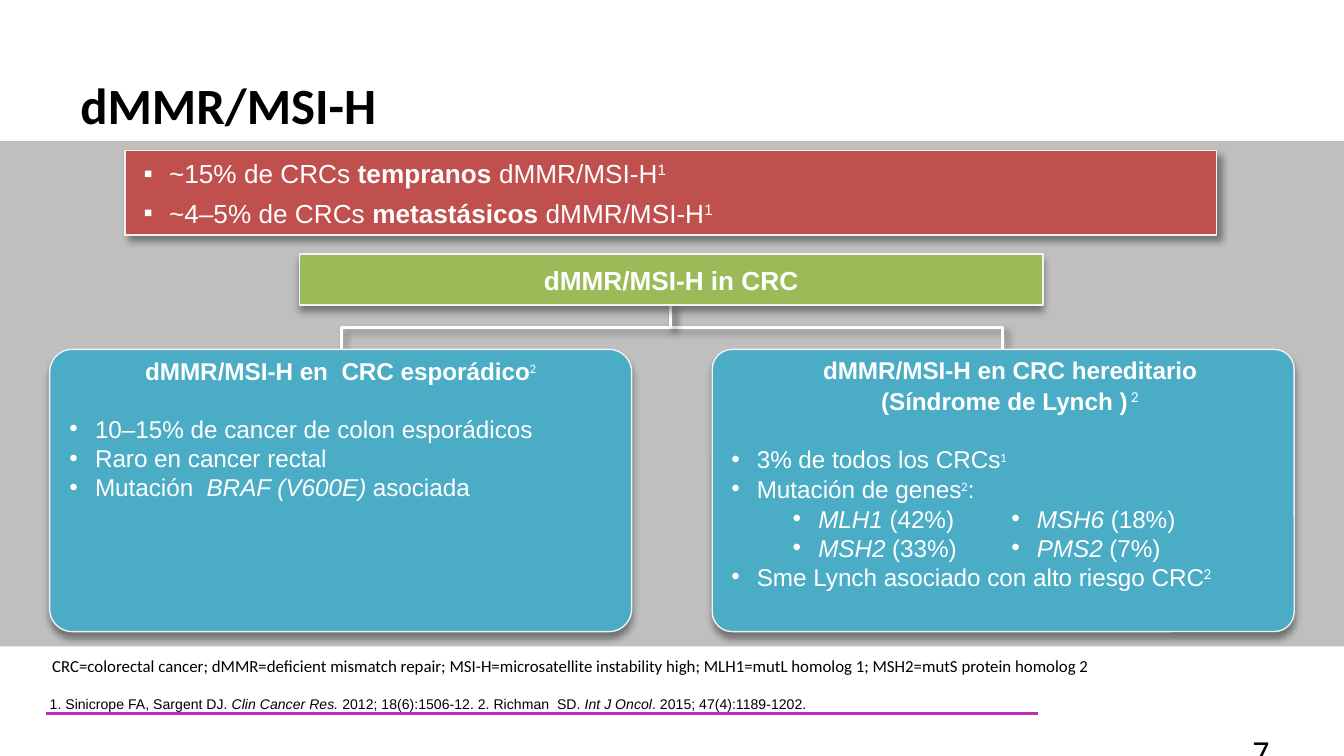
from dataclasses import dataclass
from typing import Optional

from lxml.etree import SubElement
from pptx import Presentation
from pptx.dml.color import RGBColor
from pptx.enum.shapes import MSO_CONNECTOR, MSO_SHAPE
from pptx.enum.text import MSO_ANCHOR, PP_ALIGN
from pptx.oxml.ns import qn
from pptx.util import Emu, Pt

EMU_PER_PX = 9144  # 100 px to the inch
SLIDE_WIDTH = 1000


@dataclass(frozen=True)
class Theme:
    white: str = "FFFFFF"
    black: str = "000000"
    band: str = "BFBFBF"
    outline: str = "F2F2F2"
    red: str = "C0504D"
    green: str = "9BBB59"
    blue: str = "4BACC6"
    purple: str = "BE2BBB"
    body_font: str = "Arial"
    alternate_font: str = "Calibri"
    title: float = 27.2
    page: float = 18
    lead: float = 14
    body: float = 13
    mark: float = 12
    abbreviations: float = 9
    references: float = 7.5
    thin: float = 0.75
    rule: float = 1.5


THEME = Theme()


@dataclass(frozen=True)
class Span:
    text: str
    size: float = THEME.body
    font: str = THEME.body_font
    color: str = THEME.white
    bold: bool = False
    italic: bool = False
    raised: bool = False


@dataclass(frozen=True)
class Line:
    spans: list[Span]
    bullet: str = ""
    indent: int = 19
    hanging: int = 19
    level: int = 0
    centered: bool = False
    before: float = 0
    after: float = 0
    spacing: Optional[float] = None


@dataclass(frozen=True)
class Box:
    left: int
    top: int
    width: int
    height: int
    lines: list[Line]
    insets: tuple[int, int, int, int] = (10, 5, 10, 5)
    anchor: MSO_ANCHOR = MSO_ANCHOR.TOP
    columns: int = 1
    fill: str = ""  # an empty fill makes a plain text box
    shadow_angle: int = 90
    corner: float = 0


def px(value: float) -> Emu:
    return Emu(round(value * EMU_PER_PX))


def add_shadow(shape, angle: int) -> None:
    effects = SubElement(shape._element.spPr, qn("a:effectLst"))
    shadow = SubElement(effects, qn("a:outerShdw"), blurRad=str(Pt(4)), dist=str(Pt(3)),
                        dir=str(angle * 60000), algn="ctr", rotWithShape="0")
    color = SubElement(shadow, qn("a:srgbClr"), val=THEME.black)
    SubElement(color, qn("a:alpha"), val="40000")


def write_span(paragraph, span: Span) -> None:
    if span.text == "\n":
        paragraph.add_line_break()
        SubElement(paragraph._p[-1], qn("a:rPr"), sz=str(round(span.size * 100)))
        return
    run = paragraph.add_run()
    run.text = span.text
    run.font.name, run.font.size = span.font, Pt(span.size)
    run.font.bold, run.font.italic = span.bold, span.italic
    run.font.color.rgb = RGBColor.from_string(span.color)
    if span.raised:
        run._r.get_or_add_rPr().set("baseline", "30000")


def write_line(paragraph, line: Line) -> None:
    paragraph.alignment = PP_ALIGN.CENTER if line.centered else PP_ALIGN.LEFT
    paragraph.level = line.level
    if line.bullet:
        properties = paragraph._p.get_or_add_pPr()
        properties.set("marL", str(px(line.indent)))
        properties.set("indent", str(px(-line.hanging)))
        color = SubElement(properties, qn("a:buClr"))
        SubElement(color, qn("a:srgbClr"), val=THEME.white)
        SubElement(properties, qn("a:buFont"), typeface=THEME.body_font)
        SubElement(properties, qn("a:buChar"), char=line.bullet)
    paragraph.space_before, paragraph.space_after = Pt(line.before), Pt(line.after)
    if line.spacing:
        paragraph.line_spacing = line.spacing
    for span in line.spans:
        write_span(paragraph, span)


def draw_box(slide, box: Box) -> None:
    bounds = [px(value) for value in (box.left, box.top, box.width, box.height)]
    if box.fill:
        kind = MSO_SHAPE.ROUNDED_RECTANGLE if box.corner else MSO_SHAPE.RECTANGLE
        shape = slide.shapes.add_shape(kind, *bounds)
        if box.corner:
            shape.adjustments[0] = box.corner
        shape.fill.solid()
        shape.fill.fore_color.rgb = RGBColor.from_string(box.fill)
        shape.line.color.rgb = RGBColor.from_string(THEME.outline)
        shape.line.width = Pt(THEME.thin)
        add_shadow(shape, box.shadow_angle)
    else:
        shape = slide.shapes.add_textbox(*bounds)
    frame = shape.text_frame
    frame.word_wrap = True
    frame.vertical_anchor = box.anchor
    (frame.margin_left, frame.margin_top,
     frame.margin_right, frame.margin_bottom) = map(px, box.insets)
    if box.columns > 1:
        frame._txBody.bodyPr.set("numCol", str(box.columns))
    for index, line in enumerate(box.lines):
        write_line(frame.add_paragraph() if index else frame.paragraphs[0], line)


def style_connector(connector, color: str) -> None:
    connector.line.color.rgb = RGBColor.from_string(color)
    connector.line.width = Pt(THEME.rule)


def draw_branch(slide, start: tuple[int, int], end: tuple[int, int]) -> None:
    """Elbow that leaves downwards: a sideways elbow turned a quarter."""
    (x1, y1), (x2, y2) = start, end
    middle_x, middle_y = (x1 + x2) / 2, (y1 + y2) / 2
    half_width, half_height = (y2 - y1) / 2, abs(x2 - x1) / 2
    connector = slide.shapes.add_connector(
        MSO_CONNECTOR.ELBOW, px(middle_x - half_width), px(middle_y - half_height),
        px(middle_x + half_width), px(middle_y + half_height))
    transform = connector._element.spPr.find(qn("a:xfrm"))
    transform.set("rot", str((270 if x2 > x1 else 90) * 60000))
    if x2 > x1:
        transform.set("flipH", "1")
    style_connector(connector, THEME.white)
    add_shadow(connector, 45)


def mark(text: str, size: float = THEME.mark) -> Span:
    return Span(text, size, THEME.alternate_font, raised=True)


def share_line(stage: str, share: str) -> Line:
    size = THEME.lead
    return Line([Span(f"{share} de CRCs ", size), Span(f"{stage} ", size, bold=True),
                 Span("dMMR/MSI-H", size), Span("1", size, raised=True)],
                bullet="▪", indent=23, after=4.5)


def gene_line(gene: str, share: str, indent: int) -> Line:
    return Line([Span(f"{gene} ", italic=True), Span(f"({share})")], "•", indent, level=1)


def plain(text: str, size: float, font: str = THEME.alternate_font, **style: bool) -> Span:
    return Span(text, size, font, THEME.black, **style)


def reference(text: str, italic: bool = False) -> Span:
    return plain(text, THEME.references, THEME.body_font, italic=italic)


CARD_TOP, CARD_WIDTH, CARD_HEIGHT = 260, 433, 210
LEFT_CARD, RIGHT_CARD = 37, 530
BLANK_LINE = 15.5  # points

BOXES = [
    Box(50, 4, 896, 82, [Line([plain("dMMR/MSI-H", THEME.title, bold=True)])],
        insets=(10, 51, 10, 5)),
    Box(223, 189, 553, 38, [Line([Span("dMMR/MSI-H in CRC", THEME.lead, bold=True)], centered=True)],
        anchor=MSO_ANCHOR.MIDDLE, fill=THEME.green),
    Box(93, 112, 812, 63, [share_line("tempranos", "~15%"), share_line("metastásicos", "~4–5%")],
        insets=(10, 5, 0, 5), anchor=MSO_ANCHOR.MIDDLE, fill=THEME.red, shadow_angle=45),
    Box(LEFT_CARD, CARD_TOP, CARD_WIDTH, CARD_HEIGHT, [
        Line([Span("dMMR/MSI-H en  CRC esporádico", bold=True), mark("2")], centered=True),
        Line([Span("10–15% de cancer de colon esporádicos")], "•", before=BLANK_LINE),
        Line([Span("Raro en cancer rectal")], "•"),
        Line([Span("Mutación  "), Span("BRAF (V600E) ", italic=True), Span("asociada")], "•"),
    ], insets=(10, 0, 10, 5), fill=THEME.blue, corner=0.08),
    Box(RIGHT_CARD, CARD_TOP, CARD_WIDTH, CARD_HEIGHT, [
        Line([Span("dMMR/MSI-H en CRC hereditario", bold=True), Span("\n"),
              Span("(Síndrome de Lynch )", bold=True), mark(" 2", THEME.lead)], centered=True),
        Line([Span("3% de todos los CRCs"), mark("1")], "•", before=BLANK_LINE),
        Line([Span("Mutación de genes"), mark("2"), Span(":")], "•"),
        Line([Span("Sme Lynch asociado con alto riesgo CRC"), mark("2", THEME.lead)], "•",
             before=2 * BLANK_LINE),
    ], insets=(10, 0, 0, 5), fill=THEME.blue, corner=0.07),
    Box(37, 517, 909, 13, [Line([
        reference("1. Sinicrope FA, Sargent DJ. "), reference("Clin Cancer Res.", True),
        reference(" 2012; 18(6):1506-12. 2. Richman  SD. "), reference("Int J Oncol", True),
        reference(". 2015; 47(4):1189-1202.")])], insets=(0, 0, 0, 0), anchor=MSO_ANCHOR.BOTTOM),
    Box(29, 485, 938, 24, [Line([plain(
        "CRC=colorectal cancer; dMMR=deficient mismatch repair; MSI-H=microsatellite instability high; "
        "MLH1=mutL homolog 1; MSH2=mutS protein homolog 2", THEME.abbreviations)], spacing=0.9)]),
    Box(RIGHT_CARD, 370, CARD_WIDTH, 62, [
        gene_line("MLH1", "42%", 69), gene_line("MSH2", "33%", 69),
        gene_line("MSH6", "18%", 25), gene_line("PMS2", "7%", 25)], columns=2),
    Box(922, 539, 77, 22, [Line([plain("7", THEME.page)])]),
]


def main() -> None:
    presentation = Presentation()
    presentation.slide_width = px(SLIDE_WIDTH)
    presentation.slide_height = px(SLIDE_WIDTH * 9 / 16)
    slide = presentation.slides.add_slide(presentation.slide_layouts[6])

    # Footer rule and grey band
    rule = slide.shapes.add_connector(MSO_CONNECTOR.STRAIGHT, px(772), px(531), px(34), px(531))
    style_connector(rule, THEME.purple)
    SubElement(rule._element.spPr, qn("a:effectLst"))
    band = slide.shapes.add_shape(MSO_SHAPE.RECTANGLE, px(0), px(105), px(SLIDE_WIDTH), px(376))
    band.shadow.inherit = False
    band.fill.solid()
    band.fill.fore_color.rgb = RGBColor.from_string(THEME.band)
    band.line.fill.background()

    # Branches from the heading to each card
    for card_middle in (746, 254):
        draw_branch(slide, (499, 227), (card_middle, CARD_TOP))

    # Title, panels, cards and footnotes
    for box in BOXES:
        draw_box(slide, box)

    presentation.save("out.pptx")


if __name__ == "__main__":
    main()
